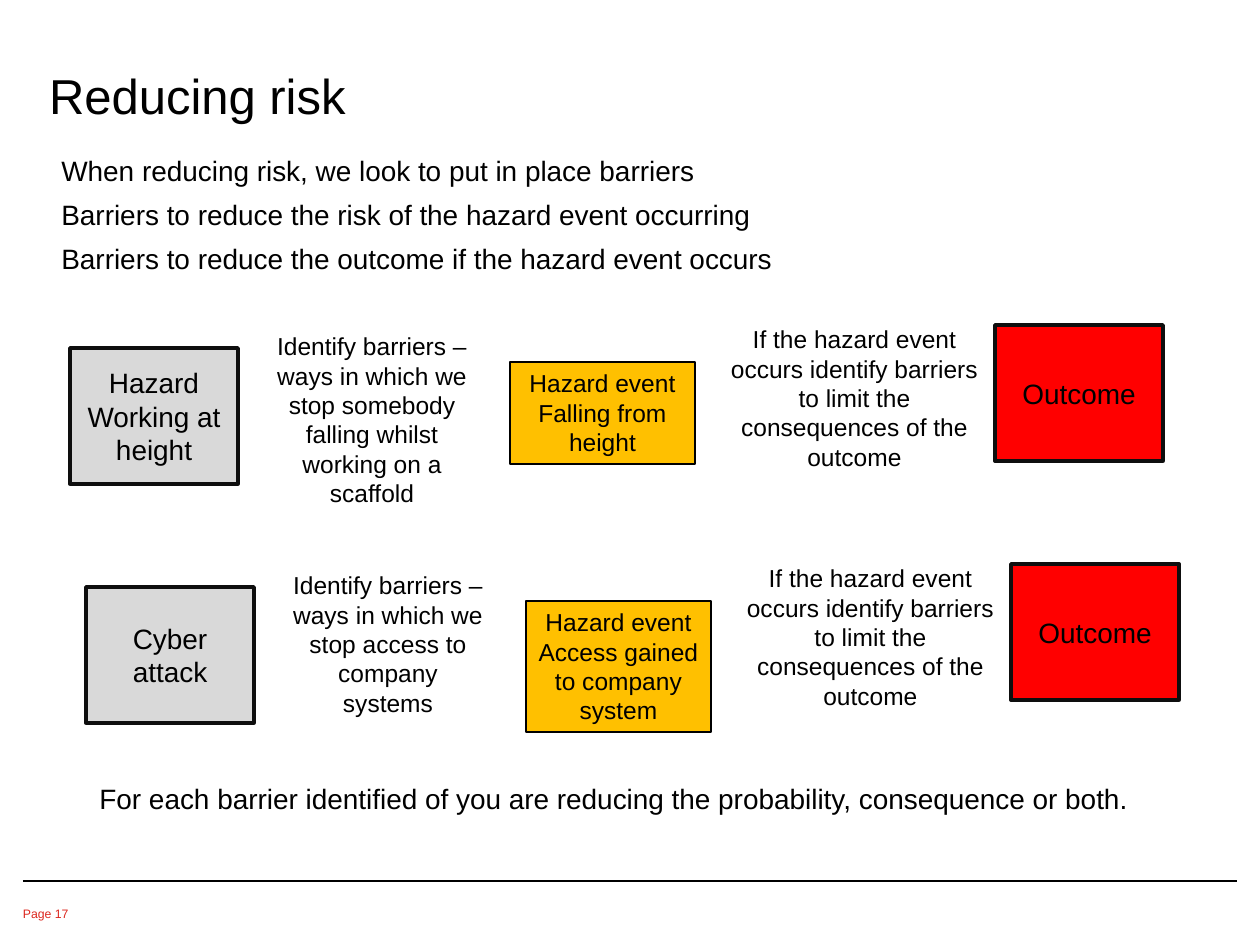
import pptx
import pptx.util
import pptx.dml.color
import pptx.enum.shapes
import pptx.enum.text
import lxml.etree

TITLE = "Reducing risk"
INTRO = [
    "When reducing risk, we look to put in place barriers",
    "Barriers to reduce the risk of the hazard event occurring",
    "Barriers to reduce the outcome if the hazard event occurs",
]
LIMIT = ("If the hazard event occurs identify barriers to limit "
         "the consequences of the outcome")
# One list per row: hazard, barriers, hazard event, limits, outcome
ROWS = [
    [["Hazard", "Working at height"],
     ["Identify barriers – ways in which we stop somebody falling whilst "
      "working on a scaffold"],
     ["Hazard event Falling from height"], [LIMIT], ["Outcome"]],
    [["Cyber attack"],
     ["Identify barriers – ways in which we stop access to company systems"],
     ["Hazard event Access gained to company system"], [LIMIT], ["Outcome"]],
]
CLOSE = "For each barrier identified of you are reducing the probability, consequence or both."
PAGE = "Page 17"

THEME = {
    "font": "Arial", "text": "000000", "page": "DC271E", "rule": "000000",
    "hazard": "D9D9D9", "event": "FFC000", "outcome": "FF0000", "edge": "0E0E0E",
    "title": 28, "body": 16, "note": 14, "foot": 7,
}
# Left, top, width, height per row, size, fill, edge, edge width in points
STEPS = [
    (70, 348, 168, (136, 136), "body", "hazard", "edge", 2),
    (262, 325, 220, (190, 161), "note", None, None, 0),
    (510, 362, 185, (102, 131), "note", "event", "rule", 0.75),
    (716, 318, 277, (161, 161), "note", None, None, 0),
    (995, 325, 168, (136, 136), "body", "outcome", "edge", 2),
]
SHIFT = (16, 239)  # each row sits this far right of and below the last
SCALE = 914400 / 126
MID = pptx.enum.text.MSO_ANCHOR.MIDDLE
TOP = pptx.enum.text.MSO_ANCHOR.TOP
LOW = pptx.enum.text.MSO_ANCHOR.BOTTOM
LEFT = pptx.enum.text.PP_ALIGN.LEFT
CENTER = pptx.enum.text.PP_ALIGN.CENTER


def px(n):
    return pptx.util.Emu(round(n * SCALE))


def color(key):
    return pptx.dml.color.RGBColor.from_string(THEME[key])


def write(shape, lines, size, tint="text", align=LEFT, anchor=TOP, gap=0, inset=None):
    frame = shape.text_frame
    frame.word_wrap = True
    frame.auto_size = pptx.enum.text.MSO_AUTO_SIZE.NONE
    frame.vertical_anchor = anchor
    if inset is not None:
        frame.margin_left = frame.margin_right = inset
        frame.margin_top = frame.margin_bottom = inset
    for i, line in enumerate(lines):
        para = frame.add_paragraph() if i else frame.paragraphs[0]
        para.alignment = align
        if i and gap:
            para.space_before = pptx.util.Pt(gap)
        run = para.add_run()
        run.text = line
        run.font.name = THEME["font"]
        run.font.size = pptx.util.Pt(THEME[size])
        run.font.color.rgb = color(tint)


def label(slide, box, lines, size, **look):
    shape = slide.shapes.add_textbox(*map(px, box))
    write(shape, lines, size, **look)


def block(slide, box, lines, size, fill, edge, width):
    shape = slide.shapes.add_shape(
        pptx.enum.shapes.MSO_SHAPE.RECTANGLE, *map(px, box))
    shape.shadow.inherit = False
    shape.fill.solid()
    shape.fill.fore_color.rgb = color(fill)
    shape.line.color.rgb = color(edge)
    shape.line.width = pptx.util.Pt(width)
    write(shape, lines, size, align=CENTER, anchor=MID if size == "body" else TOP)


def rule(slide, left, right, y):
    line = slide.shapes.add_connector(
        pptx.enum.shapes.MSO_CONNECTOR.STRAIGHT, px(left), px(y), px(right), px(y))
    line.line.color.rgb = color("rule")
    line.line.width = pptx.util.Pt(0.75)
    props = line._element.spPr
    space = props.nsmap["a"]
    lxml.etree.SubElement(props, "{%s}effectLst" % space)


def main():
    deck = pptx.Presentation()
    deck.slide_width, deck.slide_height = px(1260), px(945)
    slide = deck.slides.add_slide(deck.slide_layouts[5])

    rule(slide, 23, 1237, 881)
    title = slide.shapes.title
    title.left, title.top, title.width, title.height = map(px, (49, -10, 1179, 134))
    write(title, [TITLE], "title", anchor=LOW, inset=0)
    label(slide, (49, 147, 1147, 224), INTRO, "body", gap=6)

    for i, row in enumerate(ROWS):
        for lines, step in zip(row, STEPS):
            left, top, width, highs, size, fill, edge, weight = step
            box = (left + i * SHIFT[0], top + i * SHIFT[1], width, highs[i])
            if fill:
                block(slide, box, lines, size, fill, edge, weight)
            else:
                label(slide, box, lines, size, align=CENTER)

    label(slide, (87, 775, 1104, 47), [CLOSE], "body")
    label(slide, (23, 906, 52, 19), [PAGE], "foot", tint="page", inset=0)
    deck.save("out.pptx")


if __name__ == "__main__":
    main()
